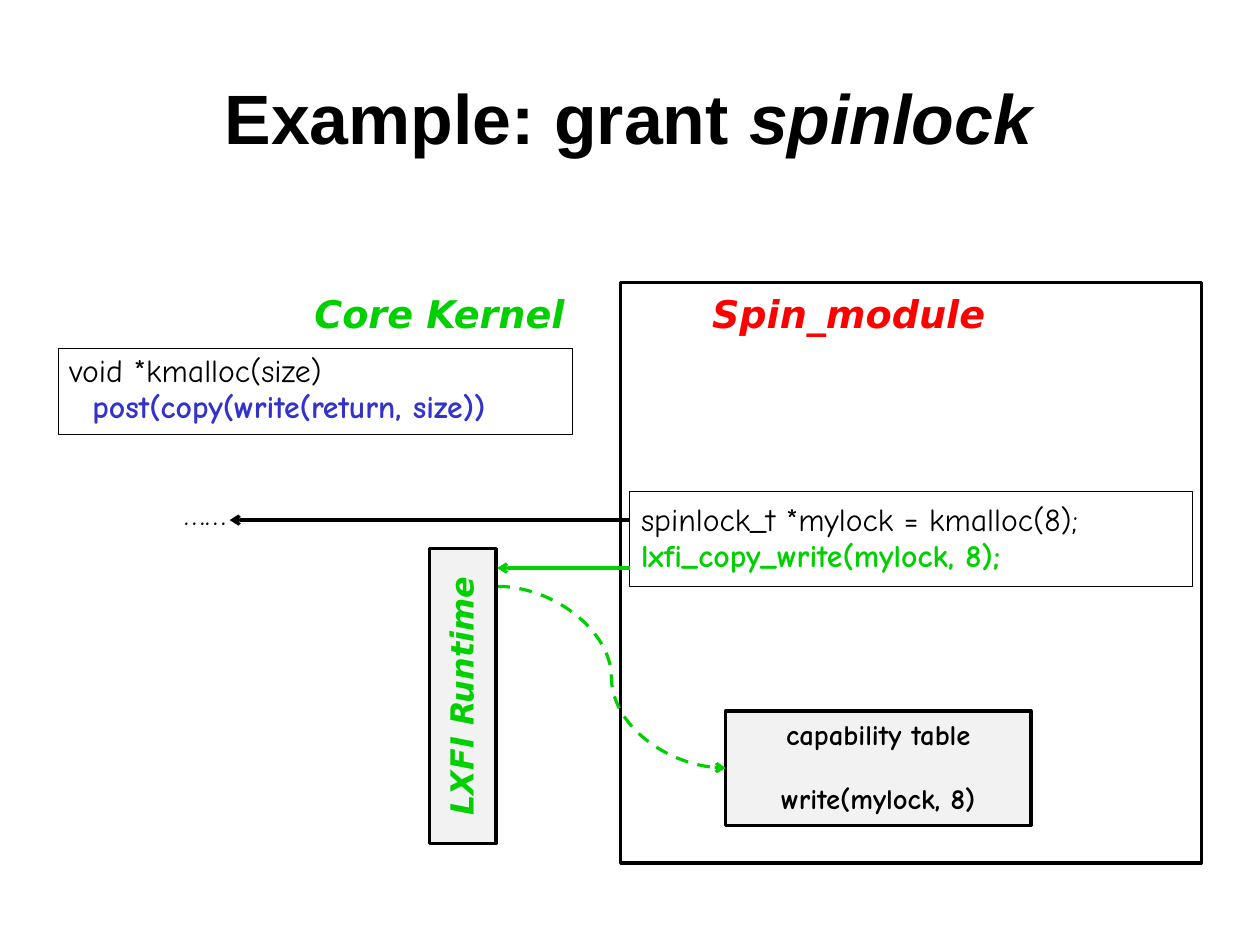
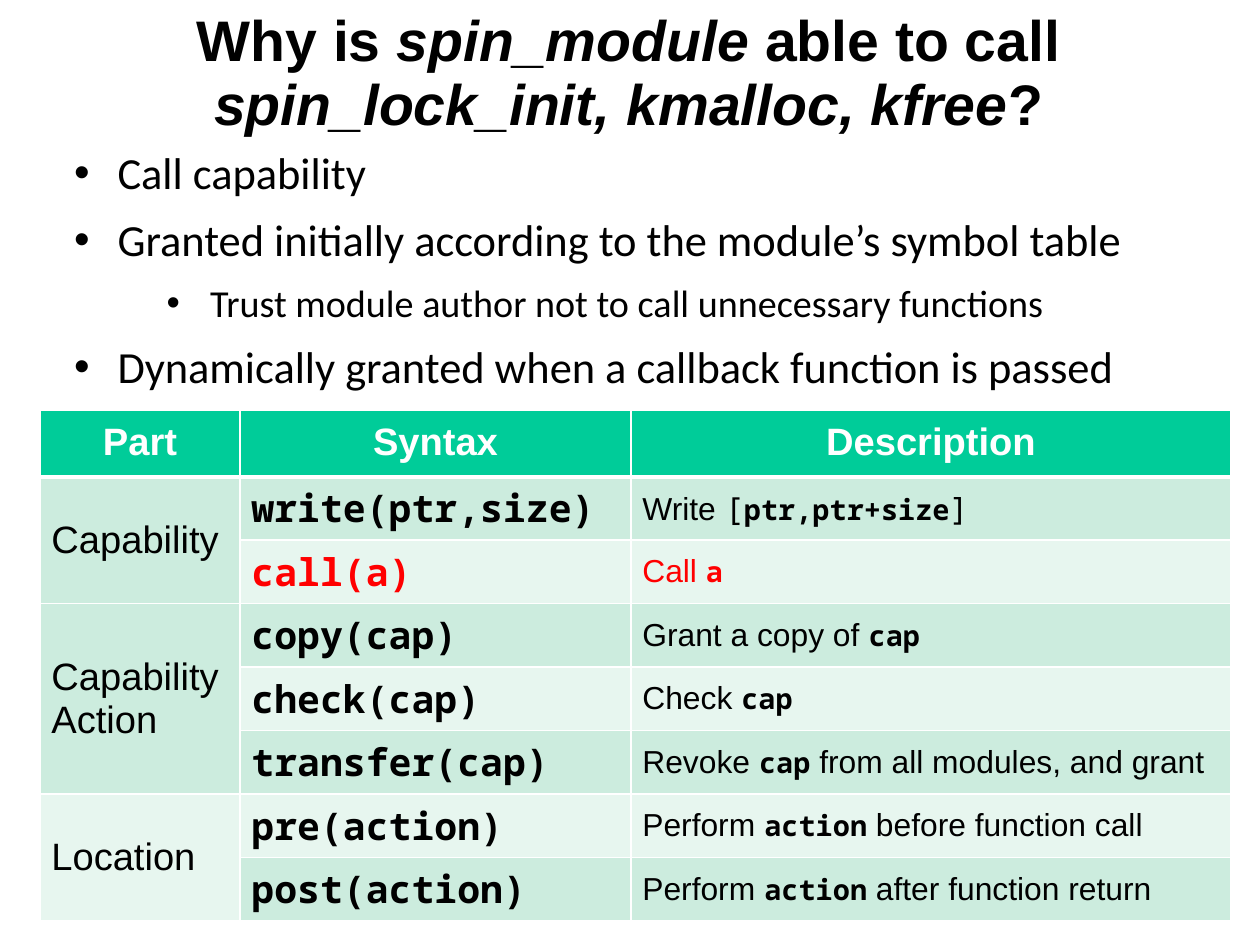
from lxml.etree import SubElement
from pptx import Presentation
from pptx.dml.color import RGBColor
from pptx.enum.dml import MSO_LINE
from pptx.enum.shapes import MSO_CONNECTOR, MSO_SHAPE
from pptx.enum.text import MSO_ANCHOR, MSO_AUTO_SIZE, PP_ALIGN
from pptx.oxml.ns import qn
from pptx.util import Cm, Inches, Pt

COLORS = {
    "black": "000000", "white": "FFFFFF", "green": "00D000", "red": "FF0000",
    "blue": "3333CC", "gray": "F2F2F2", "teal": "00CC99",
    "mint": "CCECDE", "pale": "E7F6EF",
}
MIDDLE, TOP = MSO_ANCHOR.MIDDLE, MSO_ANCHOR.TOP
LEFT, CENTER = PP_ALIGN.LEFT, PP_ALIGN.CENTER
SIDES = ("L", "R", "T", "B")


def style(name, size, color="black", **more):
    return {"name": name, "size": Pt(size), "color": color, **more}


# Text styles
CODE = style("Comic Neue", 20)
STRONG = CODE | {"bold": True}
NOTE = STRONG | {"size": Pt(18)}
LABEL = style("DejaVu Sans", 24, "green", bold=True, italic=True)
HEAD = style("Arial", 24, "white", bold=True)
PART = style("Arial", 24)
MONO = style("Noto Sans Mono", 24, bold=True)
PLAIN = style("Arial", 20)
TERM = MONO | {"size": Pt(18)}
MARK = style("Noto Sans Mono", 20)
POINT = style("Calibri", 28)


def rgb(name):
    return RGBColor.from_string(COLORS[name])


def box(left, top, width, height):
    return [Inches(n) for n in (left, top, width, height)]


def write(frame, paras, align=LEFT, space=0.93):
    """Fill a frame; each paragraph is a list of (text, style) runs."""
    for i, runs in enumerate(paras):
        para = frame.paragraphs[0] if i == 0 else frame.add_paragraph()
        para.alignment, para.line_spacing = align, space
        for text, form in runs:
            run = para.add_run()
            run.text = text
            for key, value in form.items():
                if key == "color":
                    run.font.color.rgb = rgb(value)
                else:
                    setattr(run.font, key, value)
    return frame.paragraphs


def indent(para, left, first=0):
    props = para._p.get_or_add_pPr()
    props.set("marL", str(Inches(left)))
    props.set("indent", str(Inches(first)))
    return props


def add_title(slide, top, size, parts):
    """Bold centred title; every second part is italic."""
    title = slide.shapes.title
    title.left, title.top, title.width, title.height = box(0.55, top, 9.9, 1.36)
    frame = title.text_frame
    form = {"margin_left": 0, "margin_right": 0, "margin_top": 0,
            "margin_bottom": 0, "vertical_anchor": MIDDLE,
            "auto_size": MSO_AUTO_SIZE.NONE, "word_wrap": True}
    for key, value in form.items():
        setattr(frame, key, value)
    runs = [(text, style("Arial", size, bold=True, italic=i % 2 == 1))
            for i, text in enumerate(parts)]
    write(frame, [runs], CENTER)


def add_text(slide, place, paras, align=LEFT, anchor=TOP, wrap=True, space=0.93):
    frame = slide.shapes.add_textbox(*box(*place)).text_frame
    frame.word_wrap, frame.vertical_anchor = wrap, anchor
    return write(frame, paras, align, space)


def add_rect(slide, place, fill=None, weight=2, paras=(), align=LEFT, anchor=MIDDLE):
    rect = slide.shapes.add_shape(MSO_SHAPE.RECTANGLE, *box(*place))
    rect.shadow.inherit = False
    if fill:
        rect.fill.solid()
        rect.fill.fore_color.rgb = rgb(fill)
    else:
        rect.fill.background()
    rect.line.color.rgb = rgb("black")
    rect.line.width = Pt(weight)
    rect.text_frame.word_wrap = True
    rect.text_frame.vertical_anchor = anchor
    write(rect.text_frame, paras, align)
    return rect


def add_arrow(slide, start, end, color, kind=MSO_CONNECTOR.STRAIGHT, dash=None):
    line = slide.shapes.add_connector(kind, *box(*start, *end))
    line.line.color.rgb = rgb(color)
    line.line.width = Pt(2)
    if dash:
        line.line.dash_style = dash
    SubElement(line.line._get_or_add_ln(), qn("a:tailEnd"), type="arrow")
    SubElement(line._element.spPr, qn("a:effectLst"))
    return line


def dress(cell, fill, widths):
    """White borders (left, right, top, bottom), then the fill."""
    props = cell._tc.get_or_add_tcPr()
    for side, width in zip(SIDES, widths):
        edge = SubElement(props, qn(f"a:ln{side}"), w=str(Pt(width)))
        solid = SubElement(edge, qn("a:solidFill"))
        SubElement(solid, qn("a:srgbClr"), val=COLORS["white"])
    cell.fill.solid()
    cell.fill.fore_color.rgb = rgb(fill)
    cell.vertical_anchor = MIDDLE


def add_grid(slide, heads, groups):
    """Table with one merged first cell per group of rows."""
    count = 1 + sum(len(rows) for _, rows in groups)
    grid = slide.shapes.add_table(count, len(heads), *box(0.35, 3.59, 10.42, 4.47)).table
    grid.first_row = grid.horz_banding = False
    for col, width in zip(grid.columns, (1.75, 3.42, 5.25)):
        col.width = Inches(width)
    for i, row in enumerate(grid.rows):
        row.height = Inches(3.89 / (count - 1) if i else 0.58)
    for col, text in enumerate(heads):
        cell = grid.cell(0, col)
        dress(cell, "teal", (1, 1, 1, 3))
        write(cell.text_frame, [[(text, HEAD)]], CENTER)
    top = 1
    for names, rows in groups:
        last = top + len(rows) - 1
        for row, (term, about) in enumerate(rows, top):
            edges = (1, 1, 3 if row == 1 else 1, 1)
            band = "mint" if row % 2 else "pale"
            for col in range(len(heads)):
                shade = band if col else ("mint" if top % 2 else "pale")
                dress(grid.cell(row, col), shade, edges)
            write(grid.cell(row, 1).text_frame, [[term]])
            write(grid.cell(row, 2).text_frame, [about])
        grid.cell(top, 0).merge(grid.cell(last, 0))
        write(grid.cell(top, 0).text_frame, [[(name, PART)] for name in names], space=1)
        top = last + 1


def draw_grant(slide):
    add_title(slide, 0.38, 44, ["Example: grant ", "spinlock"])
    # Module frame and headings
    add_rect(slide, (5.43, 2.47, 5.08, 5.08))
    add_text(slide, (2.51, 2.47, 2.67, 0.58), [[("Core Kernel", LABEL)]], CENTER, MIDDLE)
    add_text(slide, (6.01, 2.47, 2.83, 0.58),
             [[("Spin_module", LABEL | {"color": "red"})]], CENTER, MIDDLE)
    # Code boxes
    add_rect(slide, (5.51, 4.3, 4.92, 0.83), "white", 0.75, [
        [("spinlock_t *mylock = kmalloc(8);", CODE)],
        [("lxfi_copy_write(mylock, 8);", STRONG | {"color": "green"})]])
    kernel = add_rect(slide, (0.51, 3.05, 4.5, 0.75), "white", 0.75, [
        [("void *kmalloc(size)", CODE)],
        [("post(copy(write(return, size))", STRONG | {"color": "blue"})]], anchor=TOP)
    indent(kernel.text_frame.paragraphs[1], 0.2)
    # Capability table and runtime
    table = add_rect(slide, (6.35, 6.22, 2.67, 1), "gray", paras=[
        [("capability table", NOTE)], [("write(mylock, 8)", NOTE)]], align=CENTER)
    table.text_frame.paragraphs[1].space_before = Pt(20)
    curve = add_arrow(slide, (4.35, 5.13), (6.35, 6.72), "green",
                      MSO_CONNECTOR.CURVE, MSO_LINE.DASH)
    curve.end_connect(table, 1)
    add_arrow(slide, (5.51, 4.55), (2.01, 4.55), "black")
    runtime = add_rect(slide, (3.76, 4.8, 0.58, 2.58), "gray", paras=[
        [("LXFI Runtime", LABEL | {"size": Pt(20)})]], align=CENTER)
    runtime.text_frame._txBody.bodyPr.set("vert", "vert270")
    add_arrow(slide, (5.51, 4.97), (4.35, 4.97), "green")
    add_text(slide, (1.51, 4.3, 0.6, 0.41), [[("……", CODE)]], wrap=False)


def draw_call(slide):
    add_title(slide, -0.03, 36, ["Why is ", "spin_module", " able to call ",
                                 "spin_lock_init, kmalloc, kfree", "?"])
    # Bullets
    points = [
        (0, "Call capability"),
        (0, "Granted initially according to the module’s symbol table"),
        (1, "Trust module author not to call unnecessary functions"),
        (0, "Dynamically granted when a callback function is passed"),
    ]
    paras = add_text(slide, (0.55, 1.22, 9.92, 5.45), [
        [(text, POINT | {"size": Pt(24 if level else 28)})]
        for level, text in points], space=1)
    for para, (level, _) in zip(paras, points):
        para.level, para.space_before = level, Pt(8.8)
        props = indent(para, 1.19 if level else 0.38, -0.38)
        SubElement(props, qn("a:buFont"), typeface="Arial")
        SubElement(props, qn("a:buChar"), char="•")
    # Annotation table
    red = {"color": "red"}
    add_grid(slide, ("Part", "Syntax", "Description"), [
        (["Capability"], [
            (("write(ptr,size)", MONO),
             [("Write ", PLAIN), ("[", MARK), ("ptr,ptr+size", TERM), ("]", MARK)]),
            (("call(a)", MONO | red), [("Call ", PLAIN | red), ("a", TERM | red)]),
        ]),
        (["Capability", "Action"], [
            (("copy(cap)", MONO), [("Grant a copy of ", PLAIN), ("cap", TERM)]),
            (("check(cap)", MONO), [("Check ", PLAIN), ("cap", TERM)]),
            (("transfer(cap)", MONO), [("Revoke ", PLAIN), ("cap", TERM),
                                       (" from all modules, and grant", PLAIN)]),
        ]),
        (["Location"], [
            ((f"{when}(action)", MONO),
             [("Perform ", PLAIN), ("action", TERM), (f" {word} function {end}", PLAIN)])
            for when, word, end in (("pre", "before", "call"), ("post", "after", "return"))
        ]),
    ])


def main():
    deck = Presentation()
    deck.slide_width, deck.slide_height = Cm(28), Cm(21)
    for draw in (draw_grant, draw_call):
        draw(deck.slides.add_slide(deck.slide_layouts[5]))
    deck.save("out.pptx")


if __name__ == "__main__":
    main()
